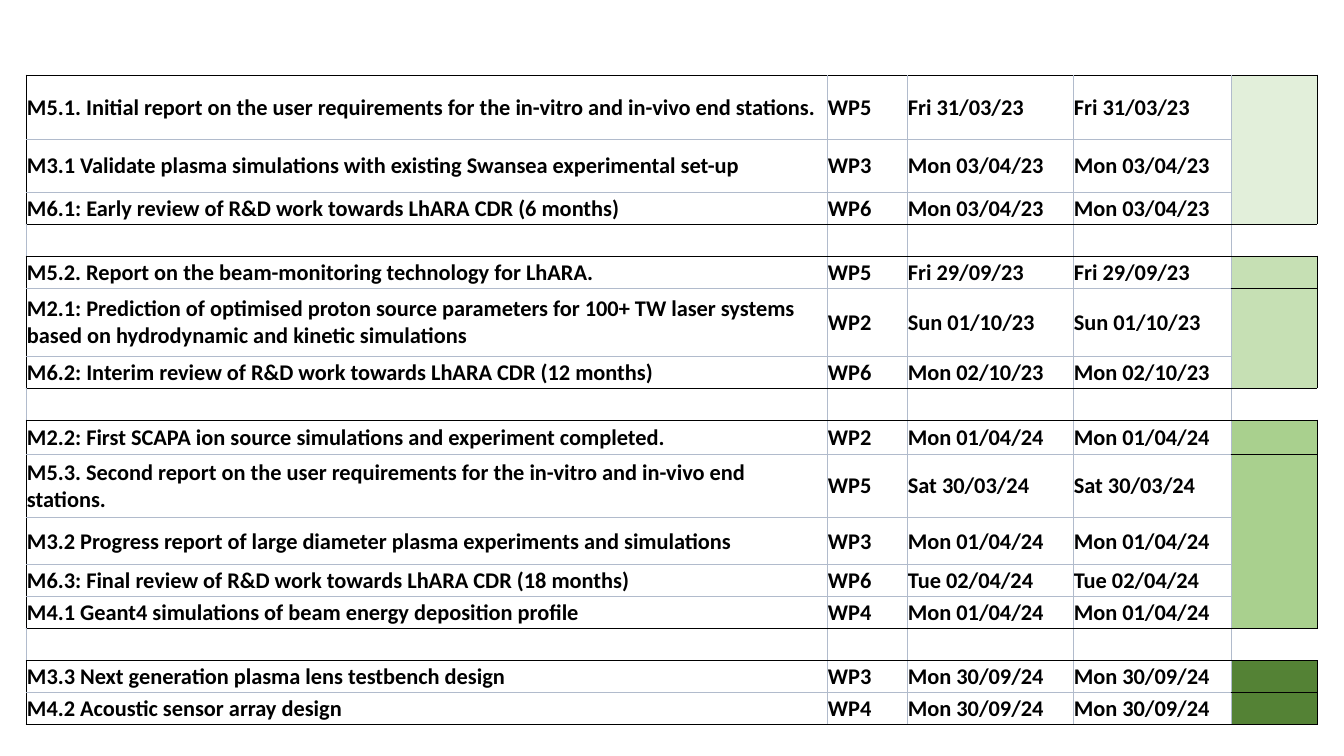
from dataclasses import dataclass

from lxml import etree
from pptx import Presentation
from pptx.dml.color import RGBColor
from pptx.enum.text import MSO_ANCHOR
from pptx.oxml.ns import qn
from pptx.util import Pt

MIDDLE = MSO_ANCHOR.MIDDLE
SCALE = 914400 / 100.8
PLAIN = "{2D5ABB26-0587-4C30-8999-92F81FD0307C}"

SIZE = (1344, 756)
LEFT, TOP = 26, 75
COLS = (801, 80, 166, 158, 86)
LINE = 32
PAD = {"margin_left": 1, "margin_right": 1, "margin_top": 1, "margin_bottom": 0}


@dataclass(frozen=True)
class Theme:
    font: str = "Calibri"
    size: int = 16
    ink: str = "000000"
    grid: str = "B1BBCC"
    paper: str = "FFFFFF"
    rule: float = 0.5
    shades: tuple = ("E2EFDA", "C6E0B4", "A9D08E", "548235")


THEME = Theme()

# Each stage lists its milestones: row height, title, work package, date.
STAGES = (
    (
        (64, "M5.1. Initial report on the user requirements for the in-vitro and "
             "in-vivo end stations.", "WP5", "Fri 31/03/23"),
        (53, "M3.1 Validate plasma simulations with existing Swansea experimental "
             "set-up", "WP3", "Mon 03/04/23"),
        (LINE, "M6.1: Early review of R&D work towards LhARA CDR (6 months)",
         "WP6", "Mon 03/04/23"),
    ),
    (
        (LINE, "M5.2. Report on the beam-monitoring technology for LhARA.",
         "WP5", "Fri 29/09/23"),
        (68, "M2.1: Prediction of optimised proton source parameters for 100+ TW "
             "laser systems based on hydrodynamic and kinetic simulations",
         "WP2", "Sun 01/10/23"),
        (LINE, "M6.2: Interim review of R&D work towards LhARA CDR (12 months)",
         "WP6", "Mon 02/10/23"),
    ),
    (
        (34, "M2.2: First SCAPA ion source simulations and experiment completed.",
         "WP2", "Mon 01/04/24"),
        (64, "M5.3. Second report on the user requirements for the in-vitro and "
             "in-vivo end stations.", "WP5", "Sat 30/03/24"),
        (47, "M3.2 Progress report of large diameter plasma experiments and "
             "simulations", "WP3", "Mon 01/04/24"),
        (LINE, "M6.3: Final review of R&D work towards LhARA CDR (18 months)",
         "WP6", "Tue 02/04/24"),
        (LINE, "M4.1 Geant4 simulations of beam energy deposition profile",
         "WP4", "Mon 01/04/24"),
    ),
    (
        (LINE, "M3.3 Next generation plasma lens testbench design",
         "WP3", "Mon 30/09/24"),
        (LINE, "M4.2 Acoustic sensor array design", "WP4", "Mon 30/09/24"),
    ),
)


def px(count):
    return round(count * SCALE)


def apply(target, values):
    for name, value in values.items():
        setattr(target, name, value)


def plan():
    """Return rows of (height, texts, shade, first, last), with a gap between stages."""
    rows = []
    for shade, stage in zip(THEME.shades, STAGES):
        if rows:
            rows.append((LINE, [""] * len(COLS), None, True, True))
        for at, (high, title, pack, date) in enumerate(stage):
            texts = [title, pack, date, date, ""]
            rows.append((high, texts, shade, at == 0, at == len(stage) - 1))
    return rows


def edges(col, shade, first, last):
    """Choose side colours: dark around a stage, pale inside, none within its shade."""
    end = col == len(COLS) - 1
    inner = None if end else THEME.grid
    outer = THEME.ink if shade else None
    return {
        "L": THEME.ink if shade and col == 0 else THEME.grid,
        "R": outer if end else THEME.grid,
        "T": THEME.ink if first else inner,
        "B": THEME.ink if last else inner,
    }


def border(cell, sides):
    props = cell._tc.get_or_add_tcPr()
    for side, color in sides.items():
        if color:
            line = etree.SubElement(props, qn(f"a:ln{side}"), w=str(Pt(THEME.rule)))
            fill = etree.SubElement(line, qn("a:solidFill"))
            etree.SubElement(fill, qn("a:srgbClr"), val=color)


def write(cell, text):
    apply(cell, {name: px(gap) for name, gap in PAD.items()})
    cell.vertical_anchor = MIDDLE
    para = cell.text_frame.paragraphs[0]
    if not text:
        etree.SubElement(para._p, qn("a:endParaRPr"), sz=str(THEME.size * 100))
        return
    run = para.add_run()
    run.text = text
    apply(run.font, {"name": THEME.font, "size": Pt(THEME.size), "bold": True})
    run.font.color.rgb = RGBColor.from_string(THEME.ink)


def paint(cell, color):
    cell.fill.solid()
    cell.fill.fore_color.rgb = RGBColor.from_string(color)


def schedule(slide):
    rows = plan()
    high = sum(row[0] for row in rows)
    frame = slide.shapes.add_table(
        len(rows), len(COLS), px(LEFT), px(TOP), px(sum(COLS)), px(high))
    table = frame.table
    apply(table, {"first_row": False, "horz_banding": False})
    table._tbl.tblPr.find(qn("a:tableStyleId")).text = PLAIN
    for col, wide in zip(table.columns, COLS):
        col.width = px(wide)
    for at, (tall, texts, shade, first, last) in enumerate(rows):
        table.rows[at].height = px(tall)
        for col, text in enumerate(texts):
            cell = table.cell(at, col)
            write(cell, text)
            border(cell, edges(col, shade, first, last))
            end = col == len(COLS) - 1
            paint(cell, shade if shade and end else THEME.paper)


def main():
    deck = Presentation()
    deck.slide_width, deck.slide_height = map(px, SIZE)
    slide = deck.slides.add_slide(deck.slide_layouts[6])
    schedule(slide)
    deck.save("out.pptx")


if __name__ == "__main__":
    main()
